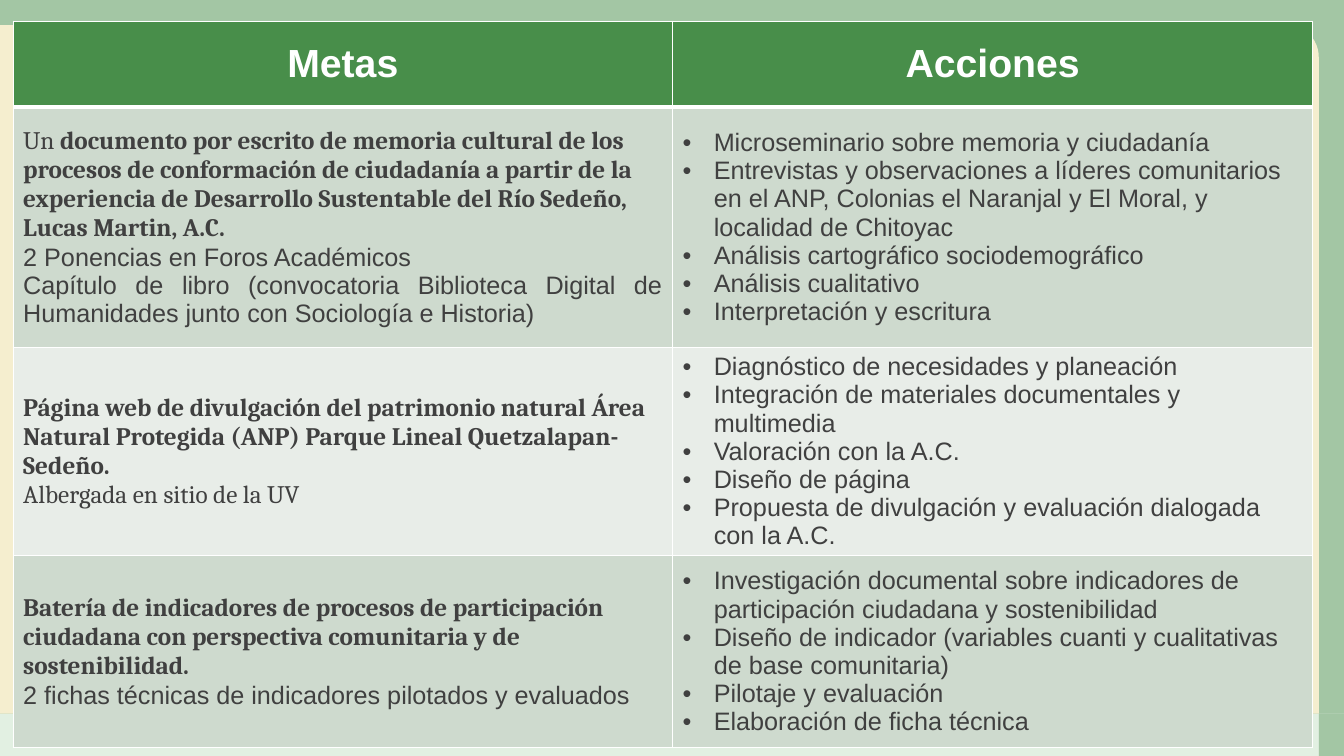
from dataclasses import dataclass

import pptx
import pptx.dml.color
import pptx.enum.shapes
import pptx.enum.text
import pptx.oxml
import pptx.oxml.ns
import pptx.util
from lxml import etree

Inches = pptx.util.Inches
Align = pptx.enum.text.PP_ALIGN
Shape = pptx.enum.shapes.MSO_SHAPE
qn = pptx.oxml.ns.qn

GREEN, WHITE, TEXT = "488E4A", "FFFFFF", "404040"
BAND_FILLS = ("CEDACE", "E8EDE8")
COLUMN_WIDTHS = (6.54, 6.35)
ROW_HEIGHTS = (0.85, 2.39, 1.82, 1.91)
BULLET_INDENT = Inches(0.31)


@dataclass(frozen=True)
class Panel:
    left: float
    top: float
    width: float
    height: float
    color: str
    opacity: int = 100
    kind: int = Shape.RECTANGLE


@dataclass(frozen=True)
class Span:
    text: str
    bold: bool = False
    font: str = "Arial"
    size: int = 18
    color: str = TEXT


@dataclass(frozen=True)
class Line:
    spans: tuple[Span, ...]
    alignment: int = Align.LEFT
    bulleted: bool = False


def heading(text: str) -> list[Line]:
    return [Line((Span(text, True, size=28, color=WHITE),), Align.CENTER)]


def goal(text: str) -> Line:
    return Line((Span(text, True, "Cambria"),))


def detail(text: str, alignment: int = Align.LEFT, font: str = "Arial") -> Line:
    return Line((Span(text, font=font),), alignment)


def actions(*texts: str) -> list[Line]:
    return [Line((Span(text),), bulleted=True) for text in texts]


PANELS = [
    Panel(0, 7.08, 13.08, 0.42, "D6EBD6", 70),
    Panel(13.08, 7.08, 0.25, 0.42, GREEN, 50),
    Panel(0, 0, 13.33, 7.08, GREEN, 50),
    Panel(0, 0.25, 13.08, 6.83, "F5EECF", kind=Shape.ROUND_1_RECTANGLE),
]

ROWS = [
    (heading("Metas"), heading("Acciones")),
    (
        [
            Line((
                Span("Un ", font="Cambria"),
                Span("documento por escrito de memoria cultural de los procesos de "
                     "conformación de ciudadanía a partir de la experiencia de Desarrollo "
                     "Sustentable del Río Sedeño, Lucas Martin, A.C.", True, "Cambria"),
            )),
            detail("2 Ponencias en Foros Académicos", Align.JUSTIFY),
            detail("Capítulo de libro (convocatoria Biblioteca Digital de Humanidades "
                   "junto con Sociología e Historia)", Align.JUSTIFY),
        ],
        actions(
            "Microseminario sobre memoria y ciudadanía",
            "Entrevistas y observaciones a líderes comunitarios en el ANP, "
            "Colonias el Naranjal y El Moral, y localidad de Chitoyac",
            "Análisis cartográfico sociodemográfico",
            "Análisis cualitativo",
            "Interpretación y escritura",
        ),
    ),
    (
        [
            goal("Página web de divulgación del patrimonio natural Área Natural "
                 "Protegida (ANP) Parque Lineal Quetzalapan-Sedeño."),
            detail("Albergada en sitio de la UV", font="Cambria"),
        ],
        actions(
            "Diagnóstico de necesidades y planeación",
            "Integración de materiales documentales y multimedia",
            "Valoración con la A.C.",
            "Diseño de página",
            "Propuesta de divulgación y evaluación dialogada con la A.C.",
        ),
    ),
    (
        [
            goal("Batería de indicadores de procesos de participación ciudadana con "
                 "perspectiva comunitaria y de sostenibilidad."),
            detail("2 fichas técnicas de indicadores pilotados y evaluados"),
        ],
        actions(
            "Investigación documental sobre indicadores de participación ciudadana "
            "y sostenibilidad",
            "Diseño de indicador (variables cuanti y cualitativas de base comunitaria)",
            "Pilotaje y evaluación",
            "Elaboración de ficha técnica",
        ),
    ),
]


def rgb(color: str) -> pptx.dml.color.RGBColor:
    return pptx.dml.color.RGBColor.from_string(color)


def set_fill(fill, color: str, opacity: int = 100) -> None:
    fill.solid()
    fill.fore_color.rgb = rgb(color)
    if opacity < 100:
        # The colour element is the only child of the solid fill
        color_element = fill._xPr.find(qn("a:solidFill"))[0]
        etree.SubElement(color_element, qn("a:alpha"), val=str(opacity * 1000))


def draw_panel(slide, panel: Panel) -> None:
    box = map(Inches, (panel.left, panel.top, panel.width, panel.height))
    shape = slide.shapes.add_shape(panel.kind, *box)
    if panel.kind == Shape.ROUND_1_RECTANGLE:
        shape.adjustments[0] = 0.046
    shape.shadow.inherit = False
    shape.line.fill.background()
    set_fill(shape.fill, panel.color, panel.opacity)


def add_bullet(paragraph) -> None:
    properties = paragraph._p.get_or_add_pPr()
    properties.set("marL", str(BULLET_INDENT))
    properties.set("indent", str(-BULLET_INDENT))
    bullet_color = etree.SubElement(properties, qn("a:buClr"))
    etree.SubElement(bullet_color, qn("a:srgbClr"), val=TEXT)
    etree.SubElement(properties, qn("a:buFont"), typeface="Arial")
    etree.SubElement(properties, qn("a:buChar"), char="•")


def set_borders(cell, bottom_points: int) -> None:
    properties = cell._tc.get_or_add_tcPr()
    for side, points in (("L", 1), ("R", 1), ("T", 1), ("B", bottom_points)):
        width = str(pptx.util.Pt(points))
        border = etree.SubElement(properties, qn(f"a:ln{side}"), w=width)
        fill = etree.SubElement(border, qn("a:solidFill"))
        etree.SubElement(fill, qn("a:srgbClr"), val=WHITE)


def write_lines(frame, lines: list[Line]) -> None:
    for index, line in enumerate(lines):
        paragraph = frame.add_paragraph() if index else frame.paragraphs[0]
        paragraph.alignment = line.alignment
        if line.bulleted:
            add_bullet(paragraph)
        for span in line.spans:
            run = paragraph.add_run()
            run.text = span.text
            run.font.name = span.font
            run.font.size = pptx.util.Pt(span.size)
            run.font.bold = span.bold
            run.font.color.rgb = rgb(span.color)


def draw_table(slide) -> None:
    size = map(Inches, (0.13, 0.21, sum(COLUMN_WIDTHS), sum(ROW_HEIGHTS)))
    table = slide.shapes.add_table(len(ROWS), len(COLUMN_WIDTHS), *size).table
    for column, width in zip(table.columns, COLUMN_WIDTHS):
        column.width = Inches(width)
    for row_index, (height, contents) in enumerate(zip(ROW_HEIGHTS, ROWS)):
        table.rows[row_index].height = Inches(height)
        row_fill = BAND_FILLS[(row_index - 1) % 2] if row_index else GREEN
        for cell, lines in zip(table.rows[row_index].cells, contents):
            cell.vertical_anchor = pptx.enum.text.MSO_ANCHOR.MIDDLE
            set_borders(cell, 1 if row_index else 3)
            set_fill(cell.fill, row_fill)
            write_lines(cell.text_frame, lines)


def main() -> None:
    presentation = pptx.Presentation()
    presentation.slide_width = Inches(13.33)
    presentation.slide_height = Inches(7.5)
    slide = presentation.slides.add_slide(presentation.slide_layouts[6])

    # Background panels
    for panel in PANELS:
        draw_panel(slide, panel)

    # Goals and actions
    draw_table(slide)
    presentation.save("out.pptx")


if __name__ == "__main__":
    main()
